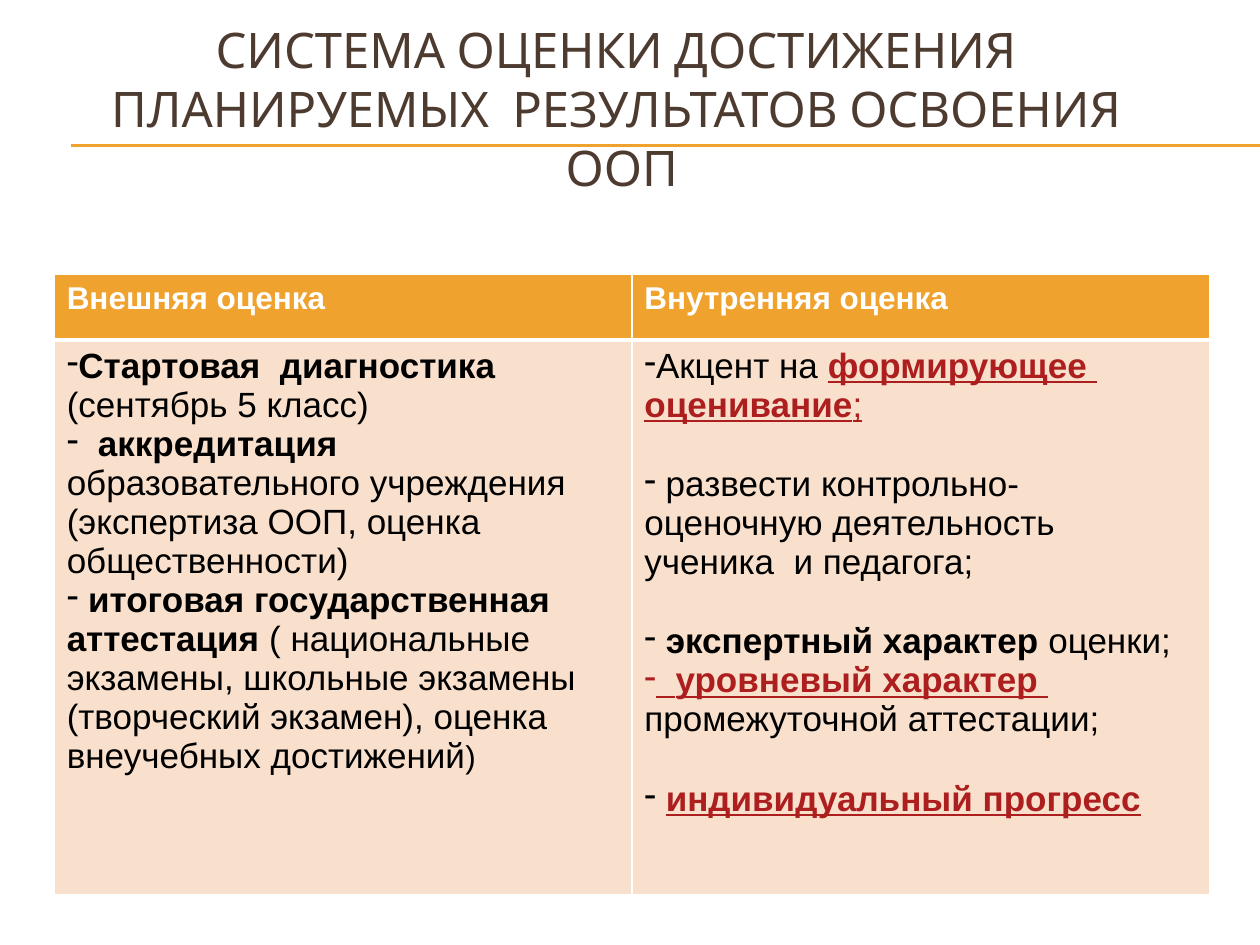
from lxml import etree
from pptx import Presentation
from pptx import util as u
from pptx.dml.color import RGBColor
from pptx.enum import shapes, text
from pptx.oxml import ns

THEME = {
    "head": "Karla", "body": "Arial",
    "brown": "4E3B30", "gold": "F0A22E", "peach": "F9E0CD",
    "red": "AD1F1F", "black": "000000", "white": "FFFFFF",
    "title": 28, "label": 18, "item": 20, "gap": 23,
}
TITLE = "СИСТЕМА ОЦЕНКИ ДОСТИЖЕНИЯ  ПЛАНИРУЕМЫХ  РЕЗУЛЬТАТОВ ОСВОЕНИЯ  ООП"
HEADS = ["Внешняя оценка", "Внутренняя оценка"]
STYLES = {
    "plain": ("black", False, False),
    "bold": ("black", True, False),
    "line": ("red", False, True),
    "key": ("red", True, True),
}
# dash, gap, runs
LISTS = [
    [
        (True, False, [("Стартовая  диагностика ", "bold"), ("(сентябрь 5 класс)", "plain")]),
        (True, False, [("  ", "plain"), ("аккредитация", "bold"),
                       ("  образовательного учреждения (экспертиза ООП, оценка общественности)", "plain")]),
        (True, False, [(" ", "plain"), ("итоговая государственная аттестация", "bold"),
                       (" ( национальные экзамены, школьные экзамены (творческий экзамен), "
                        "оценка внеучебных достижений", "plain"), (")", "plain", "label")]),
    ],
    [
        (True, False, [("Акцент на ", "plain"), ("формирующее  оценивание", "key"), (";", "line")]),
        (True, True, [(" развести контрольно-оценочную деятельность   ученика  и педагога;", "plain")]),
        (True, True, [(" ", "plain"), ("экспертный характер ", "bold"), ("оценки;", "plain")]),
        (True, False, [("  ", "line"), ("уровневый характер ", "key")]),
        (False, False, [("промежуточной аттестации;", "plain")]),
        (True, True, [(" ", "plain"), ("индивидуальный прогресс", "key")]),
    ],
]


def tint(name):
    return RGBColor.from_string(THEME[name])


def rule(slide, y):
    line = slide.shapes.add_connector(
        shapes.MSO_CONNECTOR.STRAIGHT, u.Inches(0.56), u.Inches(y), u.Inches(10), u.Inches(y))
    line.line.color.rgb = tint("gold")
    line.line.width = u.Pt(0.75)
    etree.SubElement(line._element.spPr, ns.qn("a:effectLst"))


def dress(cell, fill, top, base):
    cell.fill.solid()
    cell.fill.fore_color.rgb = tint(fill)
    prop = cell._tc.get_or_add_tcPr()
    for spot, (side, size) in enumerate(zip("LRTB", (1, 1, top, base))):
        edge = etree.Element(ns.qn("a:ln" + side), w=str(u.Pt(size)))
        paint = etree.SubElement(edge, ns.qn("a:solidFill"))
        etree.SubElement(paint, ns.qn("a:srgbClr"), val=THEME["white"])
        prop.insert(spot, edge)


def write(para, dash, gap, runs):
    prop = para._p.get_or_add_pPr()
    prop.set("marL", "0")
    prop.set("indent", "0")
    if dash:
        etree.SubElement(prop, ns.qn("a:buChar"), char="-")
    else:
        etree.SubElement(prop, ns.qn("a:buNone"))
    para.font.name = THEME["body"]
    para.font.size = u.Pt(THEME["item"])
    if gap:
        para.space_before = u.Pt(THEME["gap"])
    for words, style, *size in runs:
        run = para.add_run()
        run.text = words
        shade, run.font.bold, run.font.underline = STYLES[style]
        run.font.color.rgb = tint(shade)
        if size:
            run.font.size = u.Pt(THEME[size[0]])


def main():
    deck = Presentation()
    deck.slide_width, deck.slide_height = u.Inches(10), u.Inches(7.5)
    slide = deck.slides.add_slide(deck.slide_layouts[5])
    for y in (1.15, 1.16):
        rule(slide, y)

    title = slide.shapes.title
    title.left, title.top, title.width, title.height = map(u.Inches, (0.35, 0.23, 9.17, 1.25))
    frame = title.text_frame
    frame.text = TITLE
    frame.word_wrap = True
    frame.auto_size = text.MSO_AUTO_SIZE.NONE
    frame.vertical_anchor = text.MSO_ANCHOR.MIDDLE
    para = frame.paragraphs[0]
    para.alignment = text.PP_ALIGN.CENTER
    para.font.name = THEME["head"]
    para.font.size = u.Pt(THEME["title"])
    para.font.color.rgb = tint("brown")

    grid = slide.shapes.add_table(
        2, 2, u.Inches(0.43), u.Inches(2.18), u.Inches(9.17), u.Inches(4.92)).table
    for row, high in zip(grid.rows, (0.52, 4.4)):
        row.height = u.Inches(high)
    for col, (head, items) in enumerate(zip(HEADS, LISTS)):
        cell = grid.cell(0, col)
        dress(cell, "gold", 1, 3)
        cell.text = head
        font = cell.text_frame.paragraphs[0].font
        font.name, font.size, font.bold = THEME["body"], u.Pt(THEME["label"]), True
        font.color.rgb = tint("white")
        cell = grid.cell(1, col)
        dress(cell, "peach", 3, 1)
        frame = cell.text_frame
        for spot, item in enumerate(items):
            write(frame.add_paragraph() if spot else frame.paragraphs[0], *item)
    deck.save("out.pptx")


if __name__ == "__main__":
    main()
